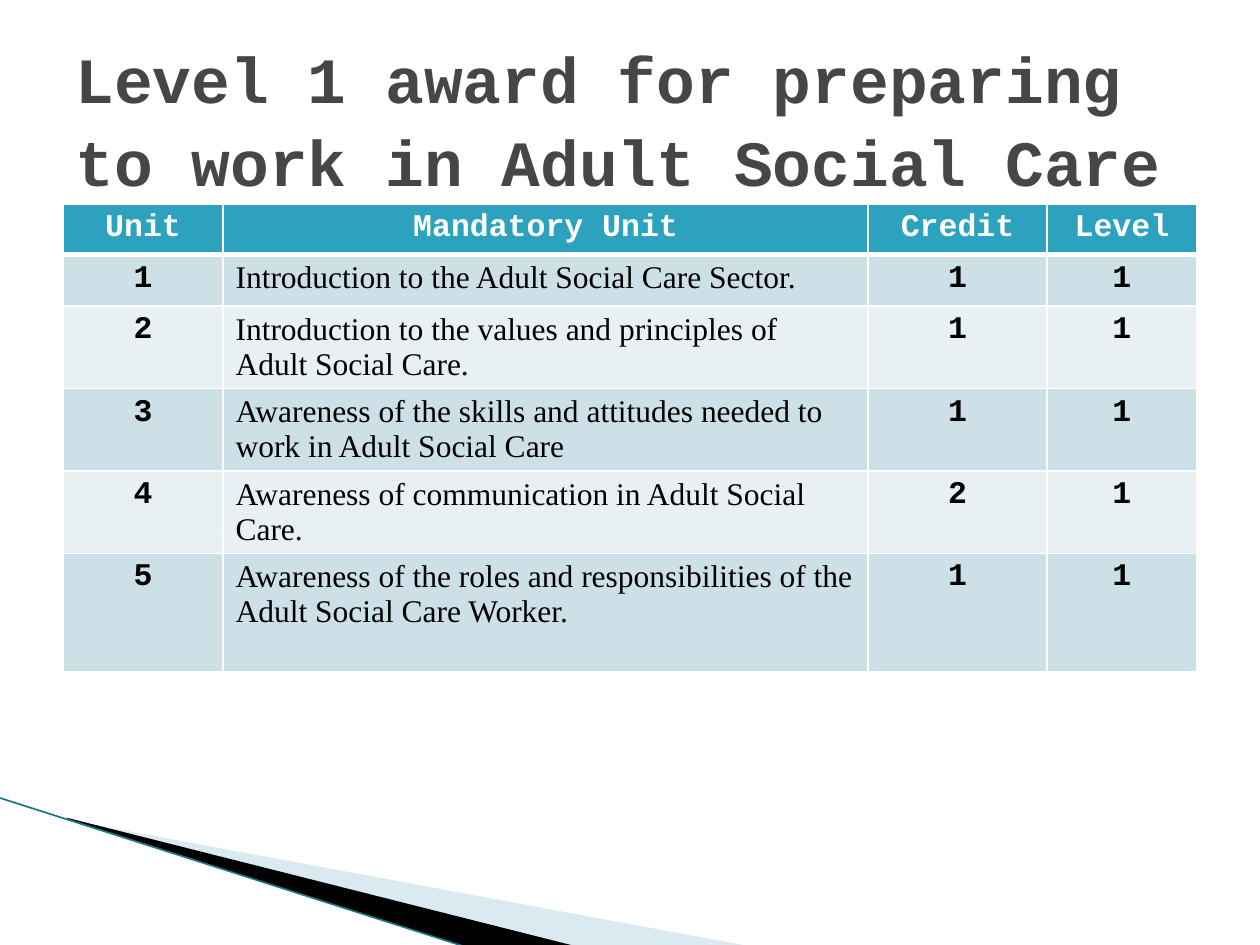
from pptx import Presentation
from pptx.dml.color import RGBColor
from pptx.enum.shapes import MSO_CONNECTOR as Connector
from pptx.enum.text import MSO_ANCHOR as Anchor, PP_ALIGN as Align
from pptx.oxml import parse_xml
from pptx.oxml.ns import nsdecls
from pptx.util import Inches, Pt

THEME = {
    "title": "464646", "header": "2DA2BF", "bands": ("CDE0E8", "E8F0F4"),
    "white": "FFFFFF", "black": "000000", "pale": "A0CBDC", "edge": "1B7587",
    "mono": "Courier New", "serif": "Times New Roman",
    "title_size": 36.9, "table_size": 18,
}
TITLE = "Level 1 award for preparing to work in Adult Social Care"
HEADER = ("Unit", "Mandatory Unit", "Credit", "Level")
UNITS = [
    ("1", "Introduction to the Adult Social Care Sector.", "1", "1"),
    ("2", "Introduction to the values and principles of Adult Social Care.", "1", "1"),
    ("3", "Awareness of the skills and attitudes needed to work in Adult Social Care", "1", "1"),
    ("4", "Awareness of communication in Adult Social Care.", "2", "1"),
    ("5", "Awareness of the roles and responsibilities of the Adult Social Care Worker.", "1", "1"),
]
COLUMN_WIDTHS = (1.27, 5.12, 1.42, 1.19)
ROW_HEIGHTS = (0.4, 0.41, 0.65, 0.65, 0.65, 0.94)
WEDGES = [
    ([(0.55, 6.51), (5.95, 7.51), (4.56, 7.51), (0.55, 6.5)], "pale", 40),
    ([(0.53, 6.49), (4.57, 7.51), (3.72, 7.52), (0.54, 6.5)], "black", 100),
]
EDGE = (-0.01, 6.33, 3.71, 7.52)


def color(name):
    return RGBColor.from_string(THEME.get(name, name))


def add_text(paragraph, text, font_name, size, color_name, bold):
    run = paragraph.add_run()
    run.text = text
    run.font.name = THEME[font_name]
    run.font.size = Pt(THEME[size])
    run.font.bold = bold
    run.font.color.rgb = color(color_name)


def add_wedge(slide, points, fill, opacity):
    corners = [(Inches(x), Inches(y)) for x, y in points]
    builder = slide.shapes.build_freeform(*corners[0], scale=1.0)
    builder.add_line_segments(corners[1:], close=True)
    shape = builder.convert_to_shape()
    shape.shadow.inherit = False
    shape.line.fill.background()
    shape.fill.solid()
    shape.fill.fore_color.rgb = color(fill)
    if opacity < 100:
        shape.fill._xPr.solidFill[0].append(
            parse_xml(f'<a:alpha {nsdecls("a")} val="{opacity * 1000}"/>'))


def add_edge(slide):
    line = slide.shapes.add_connector(Connector.STRAIGHT, *map(Inches, EDGE))
    line.line.color.rgb = color("edge")
    line.line.width = Pt(0.95)
    line._element.spPr.append(parse_xml(f'<a:effectLst {nsdecls("a")}/>'))


def style_cell(cell, fill, bottom_width):
    properties = cell._tc.get_or_add_tcPr()
    for side, width in (("L", 1), ("R", 1), ("T", 1), ("B", bottom_width)):
        properties.append(parse_xml(
            f'<a:ln{side} {nsdecls("a")} w="{Pt(width)}"><a:solidFill>'
            f'<a:srgbClr val="{THEME["white"]}"/></a:solidFill></a:ln{side}>'))
    cell.fill.solid()
    cell.fill.fore_color.rgb = color(fill)


def add_units_table(slide):
    rows = [HEADER, *UNITS]
    table = slide.shapes.add_table(
        len(rows), len(HEADER), Inches(0.5), Inches(1.62),
        Inches(sum(COLUMN_WIDTHS)), Inches(sum(ROW_HEIGHTS))).table
    for column, width in zip(table.columns, COLUMN_WIDTHS):
        column.width = Inches(width)
    for index, (row, height, texts) in enumerate(zip(table.rows, ROW_HEIGHTS, rows)):
        row.height = Inches(height)
        is_header = index == 0
        fill = "header" if is_header else THEME["bands"][(index - 1) % 2]
        for column_index, (cell, text) in enumerate(zip(row.cells, texts)):
            is_name = column_index == 1 and not is_header
            style_cell(cell, fill, 3 if is_header else 1)
            paragraph = cell.text_frame.paragraphs[0]
            paragraph.alignment = Align.LEFT if is_name else Align.CENTER
            add_text(paragraph, text, "serif" if is_name else "mono", "table_size",
                     "white" if is_header else "black", not is_name)


def add_title(slide):
    box = slide.shapes.add_textbox(Inches(0.5), Inches(0.3), Inches(9), Inches(1.25))
    frame = box.text_frame
    frame.word_wrap = True
    frame.vertical_anchor = Anchor.MIDDLE
    paragraph = frame.paragraphs[0]
    paragraph.line_spacing = 1.07
    add_text(paragraph, TITLE, "mono", "title_size", "title", True)


def main():
    """Build the slide listing the mandatory units of the award."""
    presentation = Presentation()
    presentation.slide_width, presentation.slide_height = Inches(10), Inches(7.5)
    slide = presentation.slides.add_slide(presentation.slide_layouts[6])
    for points, fill, opacity in WEDGES:
        add_wedge(slide, points, fill, opacity)
    add_edge(slide)
    add_units_table(slide)
    add_title(slide)
    presentation.save("out.pptx")


if __name__ == "__main__":
    main()
